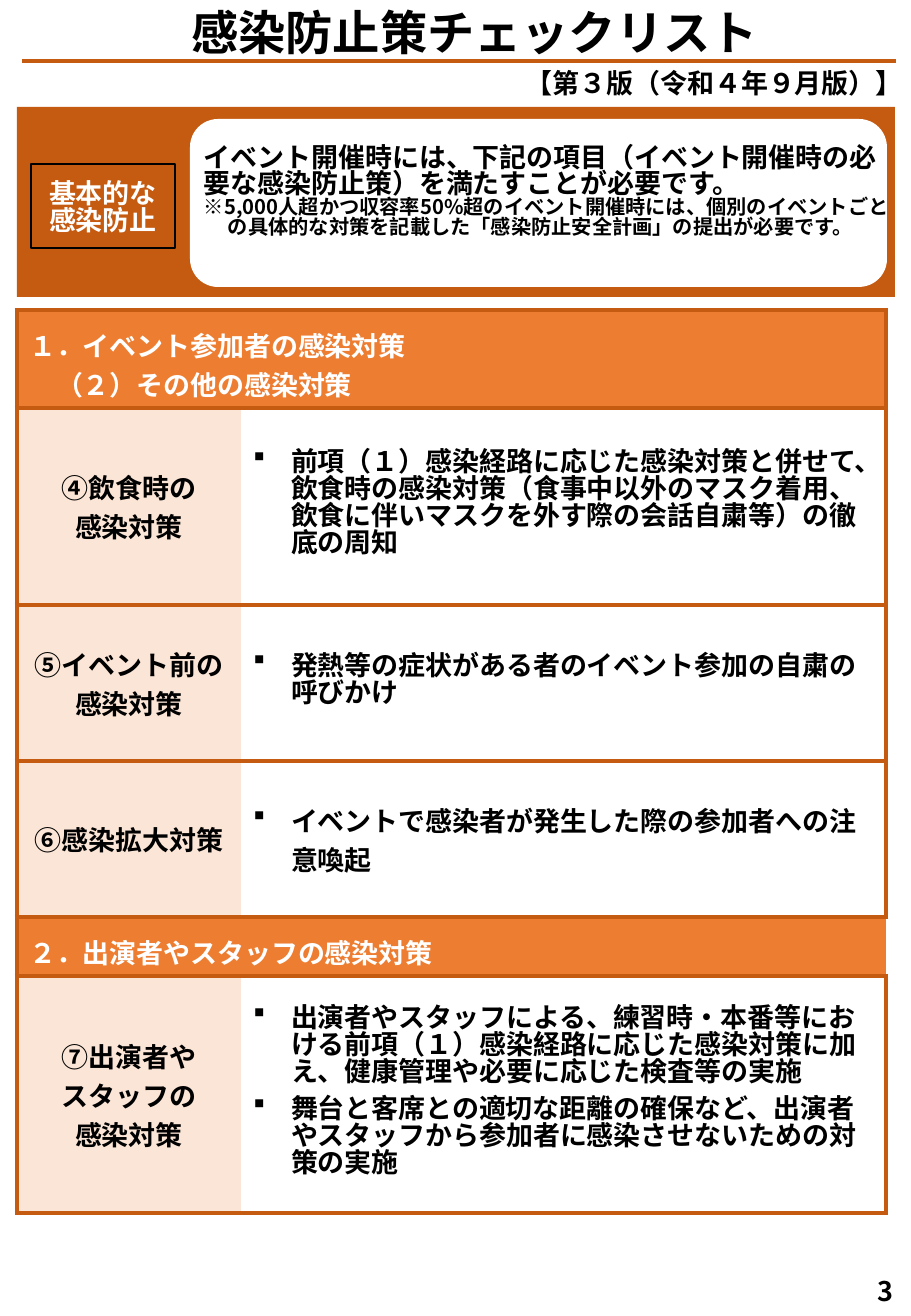
from lxml import etree
from pptx import Presentation
from pptx.dml.color import RGBColor
from pptx.enum.shapes import MSO_CONNECTOR, MSO_SHAPE
from pptx.enum.text import MSO_ANCHOR, MSO_AUTO_SIZE, PP_ALIGN
from pptx.oxml.ns import qn
from pptx.util import Pt

LEFT, CENTER = PP_ALIGN.LEFT, PP_ALIGN.CENTER
TOP, MIDDLE = MSO_ANCHOR.TOP, MSO_ANCHOR.MIDDLE
RECT, ROUNDED = MSO_SHAPE.RECTANGLE, MSO_SHAPE.ROUNDED_RECTANGLE

# Content
TITLE = "感染防止策チェックリスト"
VERSION = "【第３版（令和４年９月版）】"
PAGE = "3"
BASICS = ["基本的な", "感染防止"]
INTRO = "イベント開催時には、下記の項目（イベント開催時の必要な感染防止策）を満たすことが必要です。"
INTRO_NOTE = ("※5,000人超かつ収容率50%超のイベント開催時には、個別のイベントごとの"
              "具体的な対策を記載した「感染防止安全計画」の提出が必要です。")
# (row height, label or heading lines, measures, exact line spacing in points);
# a row without measures is a section heading
CHECKLIST = [
    (98, ["１．イベント参加者の感染対策", "　（２）その他の感染対策"], [], None),
    (197, ["④飲食時の", "感染対策"],
     ["前項（１）感染経路に応じた感染対策と併せて、飲食時の感染対策（食事中以外の"
      "マスク着用、飲食に伴いマスクを外す際の会話自粛等）の徹底の周知"], 16),
    (156, ["⑤イベント前の感染対策"],
     ["発熱等の症状がある者のイベント参加の自粛の呼びかけ"], 16),
    (156, ["⑥感染拡大対策"],
     ["イベントで感染者が発生した際の参加者への注意喚起"], None),
    (59, ["２．出演者やスタッフの感染対策"], [], None),
    (237, ["⑦出演者や", "スタッフの", "感染対策"],
     ["出演者やスタッフによる、練習時・本番等における前項（１）感染経路に応じた"
      "感染対策に加え、健康管理や必要に応じた検査等の実施",
      "舞台と客席との適切な距離の確保など、出演者やスタッフから参加者に"
      "感染させないための対策の実施"], 16),
]

# Style and layout, in px
COLORS = {"frame": "C55A11", "heading": "ED7D31", "label": "FBE5D6",
          "white": "FFFFFF", "black": "000000"}
JAPANESE, LATIN = "Noto Sans CJK JP", "Calibri"
TIGHT = 0.82
SLIDE_W, SLIDE_H = 911, 1316
TABLE_X, TABLE_Y = 17, 310
COLUMNS = [224, 645]
INDENT = 38


def px(length):
    return round(length * 914400 / 121.5)


def rgb(name):
    return RGBColor.from_string(COLORS[name])


def add_line(frame, text, first, size=16, color="black", align=LEFT,
             spacing=TIGHT, latin=JAPANESE):
    paragraph = frame.paragraphs[0] if first else frame.add_paragraph()
    paragraph.alignment = align
    if spacing:
        paragraph.line_spacing = spacing
    run = paragraph.add_run()
    run.text = text
    run.font.size, run.font.bold, run.font.name = Pt(size), True, latin
    run.font.color.rgb = rgb(color)
    etree.SubElement(run.font._element, qn("a:ea"), typeface=JAPANESE)
    return paragraph


def hang(paragraph, indent, bullet=False):
    properties = paragraph._p.get_or_add_pPr()
    properties.set("marL", str(px(indent)))
    properties.set("indent", str(-px(indent)))
    if bullet:
        etree.SubElement(properties, qn("a:buFont"), typeface="Wingdings")
        etree.SubElement(properties, qn("a:buChar"), char="§")


def add_text(x, y, w, h, anchor=TOP):
    frame = slide.shapes.add_textbox(px(x), px(y), px(w), px(h)).text_frame
    frame.word_wrap = True
    frame.vertical_anchor = anchor
    return frame


def add_panel(kind, x, y, w, h, fill=None, line=None):
    panel = slide.shapes.add_shape(kind, px(x), px(y), px(w), px(h))
    panel.shadow.inherit = False
    if fill:
        panel.fill.solid()
        panel.fill.fore_color.rgb = rgb(fill)
    else:
        panel.fill.background()
    if line:
        panel.line.color.rgb = rgb(line)
        panel.line.width = Pt(1)
    else:
        panel.line.fill.background()
    return panel


def style_cell(cell, fill, sides):
    cell.vertical_anchor = MIDDLE
    properties = cell._tc.get_or_add_tcPr()
    for side in "LRTB":
        border = etree.SubElement(properties, qn("a:ln" + side), w=str(Pt(3)))
        if side in sides:
            solid = etree.SubElement(border, qn("a:solidFill"))
            etree.SubElement(solid, qn("a:srgbClr"), val=COLORS["frame"])
        else:
            etree.SubElement(border, qn("a:noFill"))
    cell.fill.solid()
    cell.fill.fore_color.rgb = rgb(fill)


prs = Presentation()
prs.slide_width, prs.slide_height = px(SLIDE_W), px(SLIDE_H)
slide = prs.slides.add_slide(prs.slide_layouts[5])

# Title, rule and version
title = slide.shapes.title
title.left, title.top, title.width, title.height = px(-28), px(7), px(1005), px(69)
title.text_frame.auto_size = MSO_AUTO_SIZE.NONE
title.text_frame.vertical_anchor = TOP
add_line(title.text_frame, TITLE, True, size=28, align=CENTER)

rule = slide.shapes.add_connector(MSO_CONNECTOR.STRAIGHT, px(22), px(61), px(896), px(61))
rule.line.color.rgb = rgb("frame")
rule.line.width = Pt(2.25)
etree.SubElement(rule._element.spPr, qn("a:effectLst"))

add_line(add_text(502, 66, 425, 45), VERSION, True, align=CENTER)

# Basic measures banner
add_panel(RECT, 17, 107, 878, 190, fill="frame")
add_panel(ROUNDED, 190, 119, 697, 168, fill="white")
basics = add_panel(RECT, 31, 164, 144, 84, line="black").text_frame
basics.margin_top = px(12)
basics.vertical_anchor = MIDDLE
for i, text in enumerate(BASICS):
    add_line(basics, text, i == 0, color="white", align=CENTER)

intro = add_text(192, 140, 710, 130)
add_line(intro, INTRO, True)
hang(add_line(intro, INTRO_NOTE, False, size=12), 24)

# Checklist table
heights = [row[0] for row in CHECKLIST]
table = slide.shapes.add_table(len(CHECKLIST), len(COLUMNS), px(TABLE_X), px(TABLE_Y),
                               px(sum(COLUMNS)), px(sum(heights))).table
table.first_row = table.horz_banding = False
for column, width in zip(table.columns, COLUMNS):
    column.width = px(width)

for r, (height, lines, measures, spacing) in enumerate(CHECKLIST):
    table.rows[r].height = px(height)
    label, detail = table.cell(r, 0), table.cell(r, 1)
    if measures:
        style_cell(label, "label", "LTB")
        style_cell(detail, "white", "RTB")
        look = {"align": CENTER, "latin": LATIN}
    else:
        sides = "LRTB" if r == 0 else "LTB"
        label.merge(detail)
        style_cell(label, "heading", sides)
        style_cell(detail, "heading", sides)
        label.margin_top, label.margin_bottom = px(15), px(6)
        look = {"color": "white"}
    for i, text in enumerate(lines):
        add_line(label.text_frame, text, i == 0, spacing=None, **look)
    for i, text in enumerate(measures):
        measure = add_line(detail.text_frame, text, i == 0,
                           spacing=Pt(spacing) if spacing else None)
        measure.space_after = Pt(6)
        hang(measure, INDENT, bullet=True)

# Page number
add_line(add_text(849, 1271, 72, 45, MIDDLE), PAGE, True, align=CENTER)

prs.save("out.pptx")
